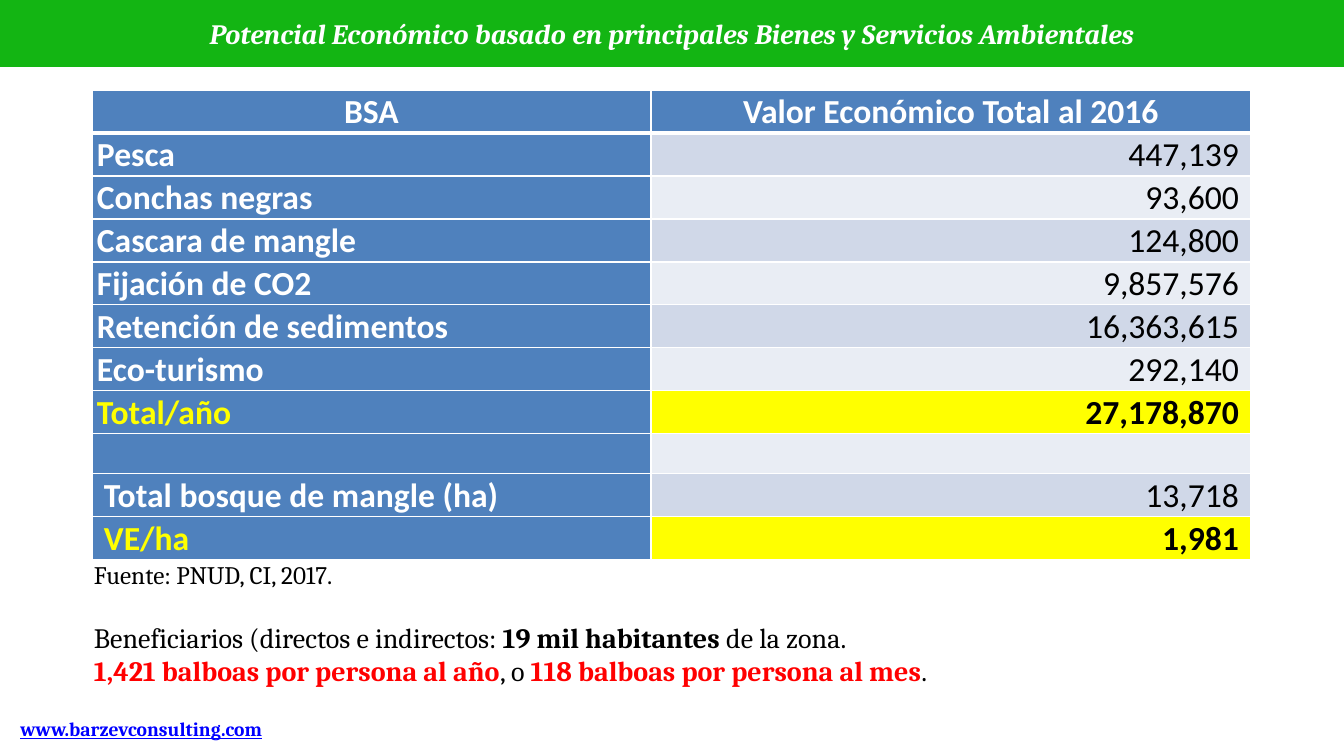
import lxml.etree
import pptx
import pptx.dml.color
import pptx.enum.shapes
import pptx.enum.text
import pptx.oxml.ns
import pptx.util

PX = 914400 / 100.8
COLORS = {
    "white": "FFFFFF", "black": "000000", "green": "13B513", "blue": "4F81BD",
    "band": "D0D8E8", "light": "E9EDF4", "yellow": "FFFF00", "red": "FF0000",
    "link": "0000FF",
}
ALIGN = pptx.enum.text.PP_ALIGN
ANCHOR = pptx.enum.text.MSO_ANCHOR
HEADINGS = ("BSA", "Valor Económico Total al 2016")
VALUES = [
    ("Pesca", "447,139"),
    ("Conchas negras", "93,600"),
    ("Cascara de mangle", "124,800"),
    ("Fijación de CO2", "9,857,576"),
    ("Retención de sedimentos", "16,363,615"),
    ("Eco-turismo", "292,140"),
    ("Total/año", "27,178,870"),
    ("", ""),
    ("Total bosque de mangle (ha)", "13,718"),
    ("VE/ha", "1,981"),
]
TOTALS = ("Total/año", "VE/ha")
PER_HECTARE = ("Total bosque de mangle (ha)", "VE/ha")
NOTES = [
    (18, 0, [("Fuente: PNUD, CI, 2017.", False, "black")]),
    (20, 22, [("Beneficiarios (directos e indirectos: ", False, "black"),
              ("19 mil habitantes ", True, "black"),
              ("de la zona.", False, "black")]),
    (20, 0, [("1,421 balboas por persona al año", True, "red"),
             (", o ", False, "black"),
             ("118 balboas por persona al mes", True, "red"),
             (".", False, "black")]),
]


def px(length):
    return pptx.util.Emu(round(length * PX))


def rgb(name):
    return pptx.dml.color.RGBColor.from_string(COLORS[name])


def style(font, face, size, color, bold=False):
    font.name = face
    font.size = pptx.util.Pt(size)
    font.color.rgb = rgb(color)
    font.bold = bold


def add_band(slide, box, fill, text, size, color, anchor):
    band = slide.shapes.add_shape(
        pptx.enum.shapes.MSO_SHAPE.RECTANGLE, *map(px, box))
    band.shadow.inherit = False
    band.fill.solid()
    band.fill.fore_color.rgb = rgb(fill)
    band.line.fill.background()
    band.text_frame.word_wrap = True
    band.text_frame.vertical_anchor = anchor
    paragraph = band.text_frame.paragraphs[0]
    paragraph.text = text
    paragraph.alignment = ALIGN.CENTER
    style(paragraph.font, "Cambria", size, color, True)
    return paragraph


def add_borders(cell, bottom):
    properties = cell._tc.get_or_add_tcPr()
    for side, points in (("L", 1), ("R", 1), ("T", 1), ("B", bottom)):
        line = lxml.etree.SubElement(
            properties, pptx.oxml.ns.qn(f"a:ln{side}"), w=str(points * 12700))
        fill = lxml.etree.SubElement(line, pptx.oxml.ns.qn("a:solidFill"))
        lxml.etree.SubElement(
            fill, pptx.oxml.ns.qn("a:srgbClr"), val=COLORS["white"])


def fill_cell(cell, text, fill, color, bold, align, bottom=1, left=5, right=5):
    add_borders(cell, bottom)
    cell.fill.solid()
    cell.fill.fore_color.rgb = rgb(fill)
    cell.margin_left, cell.margin_right = px(left), px(right)
    cell.margin_top = cell.margin_bottom = 0
    cell.vertical_anchor = ANCHOR.BOTTOM
    paragraph = cell.text_frame.paragraphs[0]
    paragraph.text = text
    paragraph.alignment = align
    paragraph.line_spacing = 1.0
    style(paragraph.font, "Calibri", 24 if text else 18, color, bold)


def add_value_table(slide, box):
    left, top, width, height = box
    table = slide.shapes.add_table(
        len(VALUES) + 1, 2, px(left), px(top), px(width), px(height)).table
    name_width = 559
    table.columns[0].width = px(name_width)
    table.columns[1].width = px(width - name_width)
    blank_height = 40
    row_height = (height - blank_height) // len(VALUES)
    table.rows[0].height = px(row_height)
    for column, heading in enumerate(HEADINGS):
        fill_cell(table.cell(0, column), heading, "blue", "white", True,
                  ALIGN.CENTER, bottom=3)
    for row, (name, value) in enumerate(VALUES, 1):
        total = name in TOTALS
        table.rows[row].height = px(row_height if name else blank_height)
        fill_cell(table.cell(row, 0), name, "blue",
                  "yellow" if total else "white", True, ALIGN.LEFT,
                  left=12 if name in PER_HECTARE else 5)
        stripe = "band" if row % 2 else "light"
        fill_cell(table.cell(row, 1), value, "yellow" if total else stripe,
                  "black", total, ALIGN.RIGHT, right=12)


def add_notes(slide, box):
    frame = slide.shapes.add_textbox(*map(px, box)).text_frame
    frame.word_wrap = True
    for index, (size, gap, runs) in enumerate(NOTES):
        paragraph = frame.add_paragraph() if index else frame.paragraphs[0]
        paragraph.space_before = pptx.util.Pt(gap)
        for text, bold, color in runs:
            run = paragraph.add_run()
            run.text = text
            style(run.font, "Cambria", size, color, bold)


def main():
    presentation = pptx.Presentation()
    presentation.slide_width, presentation.slide_height = px(1344), px(756)
    slide = presentation.slides.add_slide(presentation.slide_layouts[6])
    website = add_band(slide, (7, 712, 269, 34), "white",
                       "www.barzevconsulting.com", 14, "link", ANCHOR.TOP)
    website.font.underline = True
    add_value_table(slide, (92, 90, 1159, 470))
    add_notes(slide, (84, 554, 1159, 139))
    title = add_band(
        slide, (0, 0, 1344, 67), "green",
        "Potencial Económico basado en principales Bienes y Servicios Ambientales",
        20, "white", ANCHOR.MIDDLE)
    title.font.italic = True
    presentation.save("out.pptx")


if __name__ == "__main__":
    main()
